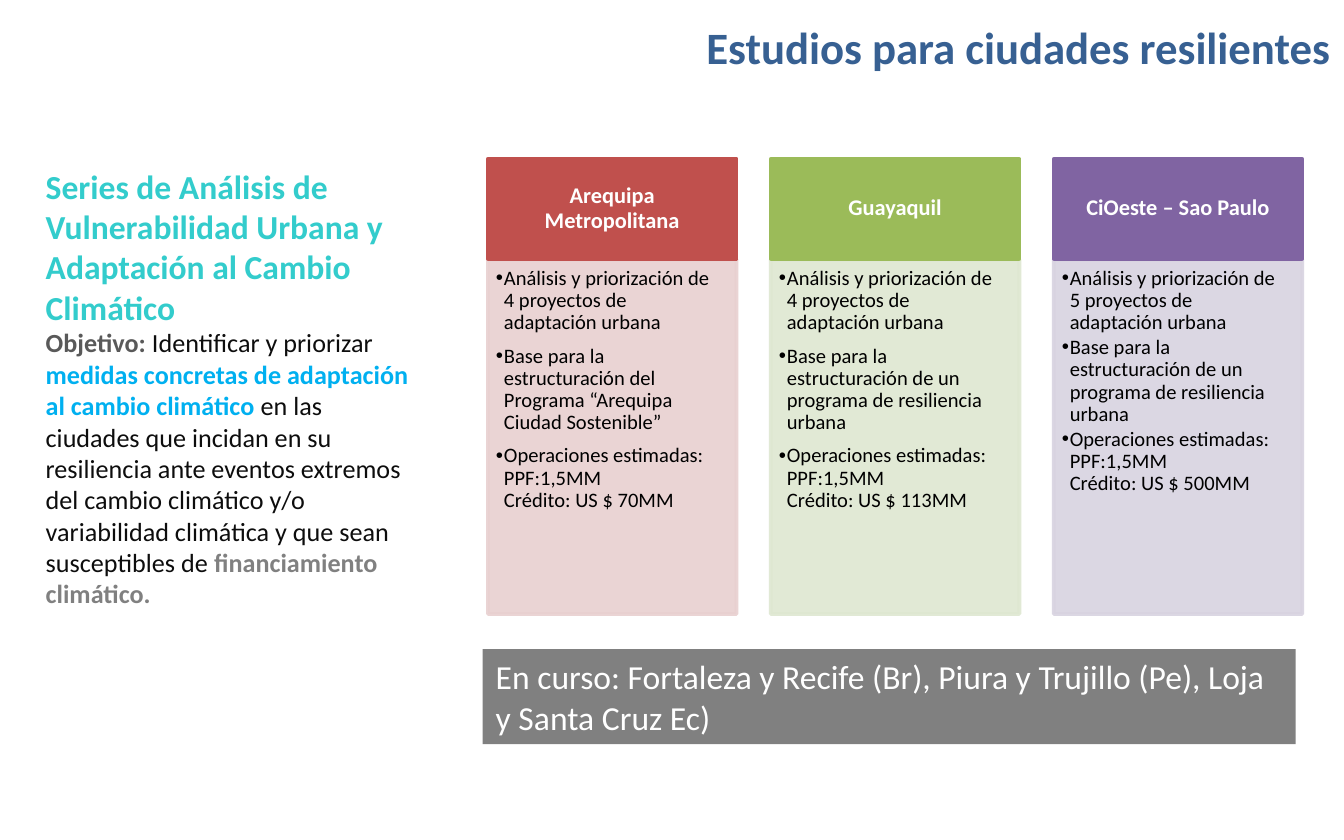
from lxml.etree import SubElement
from pptx import Presentation
from pptx.dml.color import RGBColor
from pptx.enum.shapes import MSO_SHAPE
from pptx.enum.text import MSO_ANCHOR, MSO_AUTO_SIZE, PP_ALIGN
from pptx.oxml.ns import qn
from pptx.util import Inches, Pt

HUES = {
    "title": "376092", "series": "33CCCC", "label": "595959", "text": "0D0D0D",
    "key": "00B0F0", "gray": "808080", "white": "FFFFFF", "black": "000000",
    "red": "C0504D", "rose": "E8D0D0", "green": "9BBB59", "mint": "DEE7D1",
    "plum": "8064A2", "lilac": "D8D3E0",
}
LEFT, STEP, WIDE = 36.3, 21.05, 18.5  # card columns, percent of slide width
STUDY = "Análisis y priorización de {} proyectos de adaptación urbana"
BASE = "Base para la estructuración de{}"
PLAN = BASE.format(" un programa de resiliencia urbana")
COST = "Operaciones estimadas: PPF:1,5MM\vCrédito: US $ {}MM"
CARDS = [
    ("Arequipa Metropolitana", "red", "rose", 6,
     [STUDY.format(4), BASE.format("l Programa “Arequipa Ciudad Sostenible”"),
      COST.format(70)]),
    ("Guayaquil", "green", "mint", 6, [STUDY.format(4), PLAN, COST.format(113)]),
    ("CiOeste – Sao Paulo", "plum", "lilac", 1.5,
     [STUDY.format(5), PLAN, COST.format(500)]),
]
GOAL = [
    ("Objetivo: ", "label", True),
    ("Identificar y priorizar ", "text", False),
    ("medidas concretas de adaptación al cambio climático ", "key", True),
    ("en las ciudades que incidan en su resiliencia ante eventos extremos del "
     "cambio climático y/o variabilidad climática y que sean susceptibles de ",
     "text", False),
    ("financiamiento climático.", "gray", True),
]


def hue(name):
    return RGBColor.from_string(HUES[name])


class Deck:
    """Holds the style and the current slide; places are percents of its size."""
    face = "Calibri"

    def __init__(self):
        self.show = Presentation()
        self.show.slide_width, self.show.slide_height = Inches(10), Inches(6.25)
        self.slide = self.show.slides.add_slide(self.show.slide_layouts[4])
        self.slots = {s.placeholder_format.idx: s for s in self.slide.placeholders}

    def span(self, x, y, w, h):
        wide, high = self.show.slide_width, self.show.slide_height
        return [int(v * s / 100) for v, s in zip((x, y, w, h), (wide, high) * 2)]

    def slot(self, idx, *place):
        """Move a placeholder and return its text frame."""
        shape = self.slots[idx]
        shape.left, shape.top, shape.width, shape.height = self.span(*place)
        return self.frame(shape, MSO_ANCHOR.TOP)

    def frame(self, shape, anchor):
        frame = shape.text_frame
        frame.word_wrap = True
        frame.auto_size = MSO_AUTO_SIZE.NONE
        frame.vertical_anchor = anchor
        return frame

    def font(self, font, size, color, bold=False):
        font.size, font.bold, font.name = Pt(size), bold, self.face
        font.color.rgb = hue(color)

    def para(self, para, size, color, bold=False, align=PP_ALIGN.LEFT, lines=1.0, after=0):
        para.alignment, para.line_spacing = align, lines
        para.space_before, para.space_after = Pt(0), Pt(after)
        self.font(para.font, size, color, bold)

    def title(self, text, *place):
        frame = self.slot(0, *place)
        para = frame.paragraphs[0]
        run = para.add_run()
        run.text = text
        self.para(para, 24, "title", True, PP_ALIGN.RIGHT, 0.8)
        glow = SubElement(run.font._element, qn("a:effectLst"))
        cast = SubElement(glow, qn("a:outerShdw"), blurRad="38100", dist="38100",
                          dir="2700000", algn="tl")
        tone = SubElement(cast, qn("a:srgbClr"), val=HUES["black"])
        SubElement(tone, qn("a:alpha"), val="43000")

    def goal(self, head, parts, *place):
        frame = self.slot(1, *place)
        first, rest = frame.paragraphs[0], frame.add_paragraph()
        first.text = head
        self.para(first, 18, "series", True)
        self.para(rest, 14, "text")
        for text, color, bold in parts:
            run = rest.add_run()
            run.text = text
            self.font(run.font, 14, color, bold)

    def box(self, text, size, color, *place, bold=False, align=PP_ALIGN.LEFT, lines=1.0):
        shape = self.slide.shapes.add_shape(MSO_SHAPE.RECTANGLE, *self.span(*place))
        shape.shadow.inherit = False
        shape.fill.solid()
        shape.fill.fore_color.rgb = hue(color)
        if bold:
            shape.line.color.rgb = hue(color)
            shape.line.width = Pt(2)
        else:
            shape.line.fill.background()
        frame = self.frame(shape, MSO_ANCHOR.MIDDLE)
        frame.text = text
        self.para(frame.paragraphs[0], size, "white", bold, align, lines)

    def list(self, idx, items, color, after, *place):
        frame = self.slot(idx, *place)
        frame.margin_left = frame.margin_top = Inches(0.06)
        frame.margin_right, frame.margin_bottom = Inches(0.09), Inches(0.1)
        shape = self.slots[idx]
        shape.fill.solid()
        shape.line.width = Pt(2)
        shape.line.fill.solid()
        for fill in (shape.fill, shape.line.fill):
            fill.fore_color.rgb = hue(color)
        for tone in shape._element.spPr.iter(qn("a:srgbClr")):
            SubElement(tone, qn("a:alpha"), val="90000")
        for i, item in enumerate(items):
            para = frame.add_paragraph() if i else frame.paragraphs[0]
            para.text = item
            props = para._p.get_or_add_pPr()
            props.set("marL", str(Inches(0.06)))
            props.set("indent", str(-Inches(0.06)))
            SubElement(props, qn("a:buChar"), char="•")
            self.para(para, 11, "black", lines=0.9, after=after)


def main():
    deck = Deck()
    deck.title("Estudios para ciudades resilientes", 27.7, 2.8, 72.3, 6.2)
    deck.goal("Series de Análisis de Vulnerabilidad Urbana y Adaptación al Cambio "
              "Climático", GOAL, 2.4, 18.9, 29.9, 61.4)
    for i, (city, dark, pale, after, items) in enumerate(CARDS):
        x = LEFT + i * STEP
        deck.box(city, 12, dark, x, 18.9, WIDE, 11.9, bold=True,
                 align=PP_ALIGN.CENTER, lines=0.9)
        deck.list(i + 2, items, pale, after, x, 30.9, WIDE, 42.2)
    deck.box("En curso: Fortaleza y Recife (Br), Piura y Trujillo (Pe), Loja y Santa "
             "Cruz Ec)", 18, "gray", 35.9, 77.3, 60.5, 11.3)
    deck.show.save("out.pptx")


if __name__ == "__main__":
    main()
